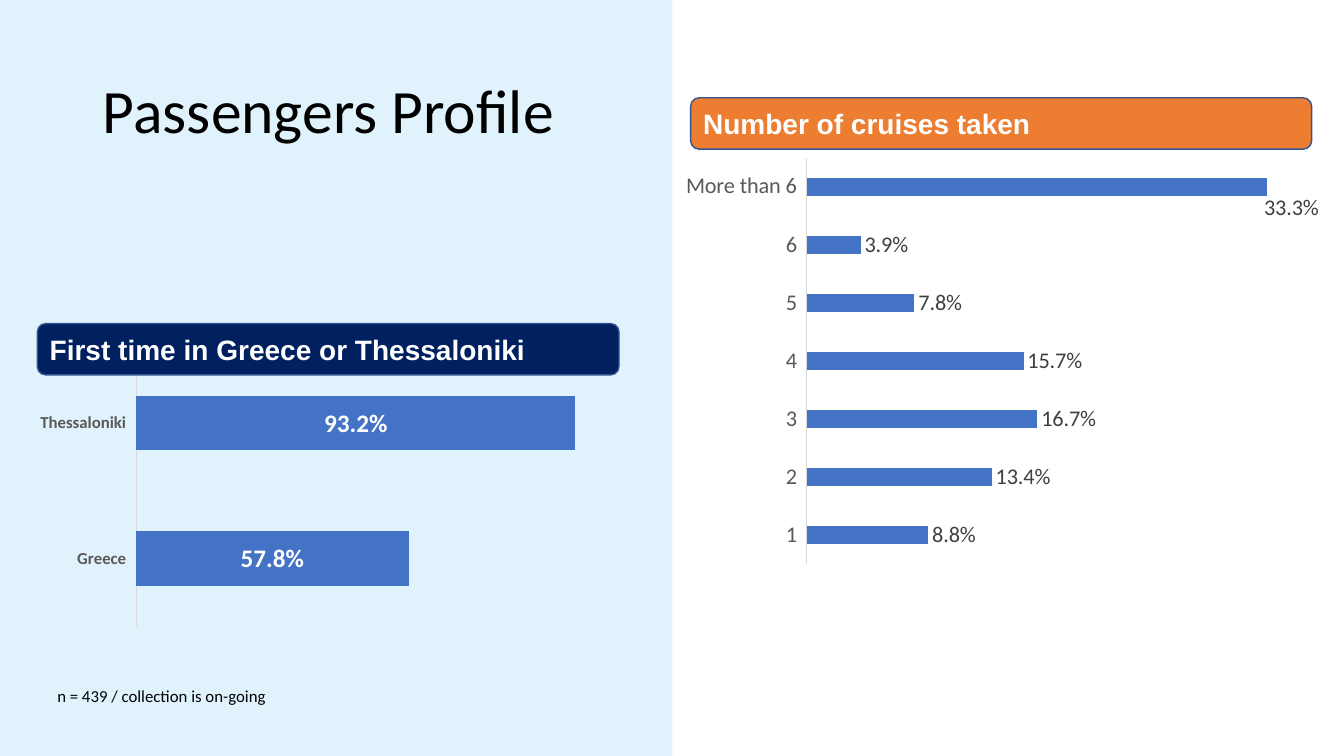
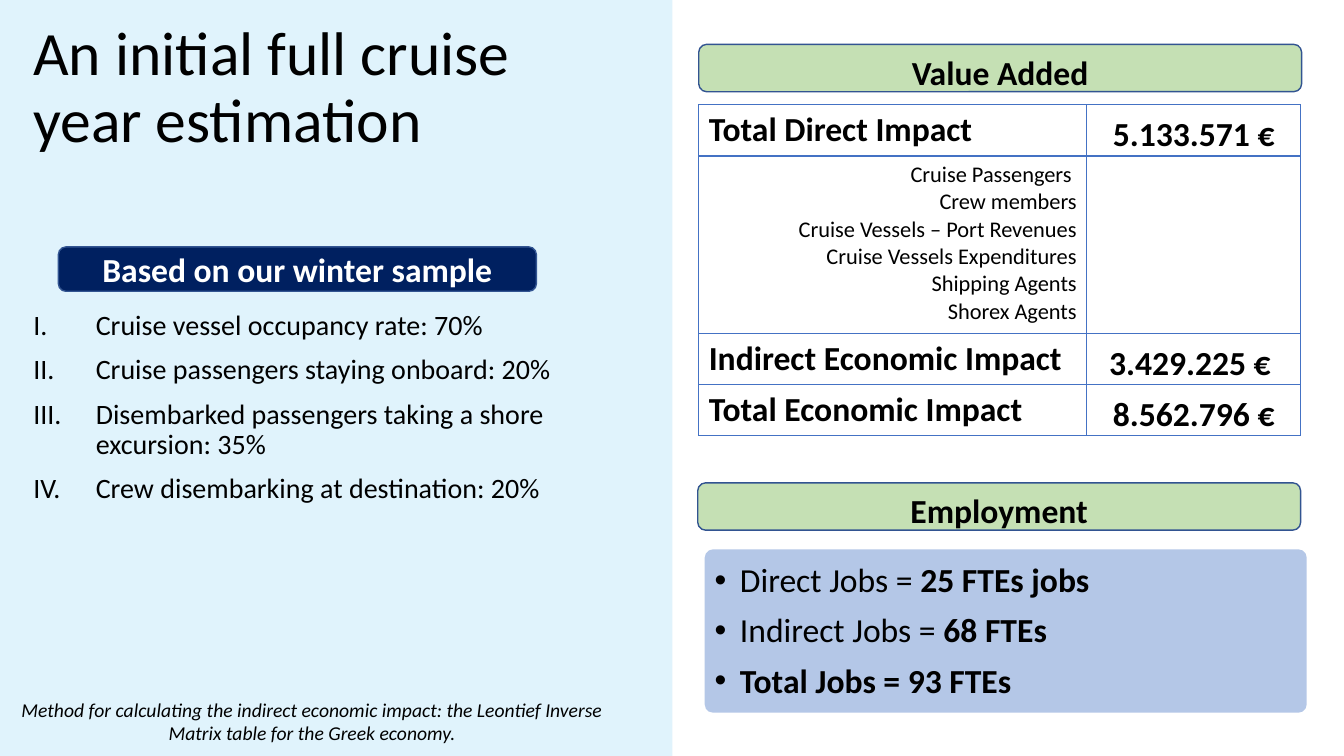
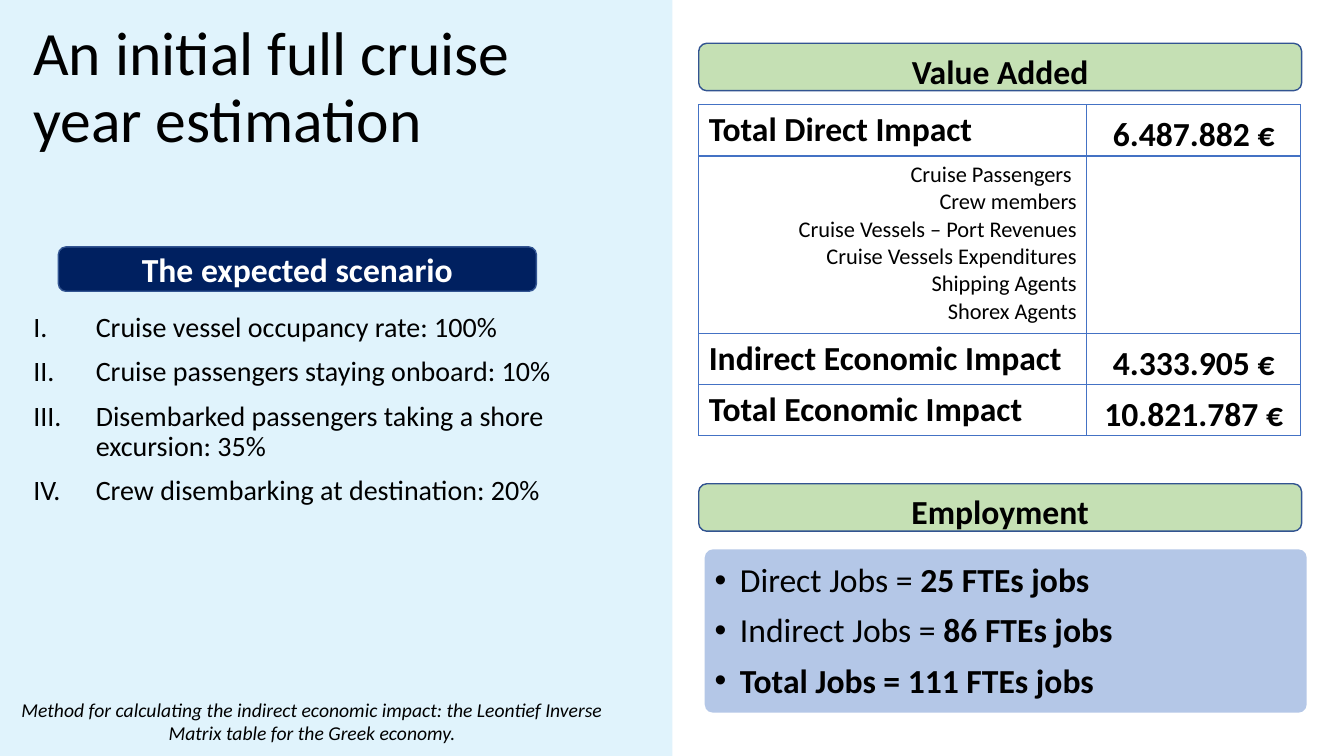
from dataclasses import dataclass

from lxml.etree import SubElement
from pptx import Presentation
from pptx.chart.data import CategoryChartData
from pptx.dml.color import RGBColor
from pptx.enum.chart import XL_CHART_TYPE, XL_LABEL_POSITION, XL_TICK_LABEL_POSITION, XL_TICK_MARK
from pptx.enum.shapes import MSO_SHAPE
from pptx.enum.text import MSO_ANCHOR, MSO_AUTO_SIZE, PP_ALIGN
from pptx.oxml import parse_xml
from pptx.oxml.ns import nsdecls, qn
from pptx.util import Pt

PX = 9144
SLIDE = (1333, 750)


@dataclass(frozen=True)
class Theme:
    font: str = "Calibri"
    heading_font: str = "Arial"
    black: str = "000000"
    white: str = "FFFFFF"
    band: str = "E0F3FC"
    navy: str = "002060"
    orange: str = "ED7D31"
    green: str = "C5E0B4"
    panel: str = "B4C7E7"
    blue: str = "4472C4"
    outline: str = "325491"
    axis_text: str = "595959"
    axis_line: str = "D9D9D9"
    label_text: str = "404040"
    title: int = 44
    large: int = 24
    body: int = 20
    value: int = 18
    detail: int = 16
    method: int = 14
    small: int = 12


T = Theme()

PROFILE = {
    "title": "Passengers Profile",
    "note": "n = 439 / collection is on-going",
    "charts": [
        {
            "heading": "Number of cruises taken", "fill": T.orange,
            "heading_box": (685, 97, 616, 51), "box": (674, 148, 634, 420),
            "kind": XL_CHART_TYPE.BAR_CLUSTERED, "gap": 219, "overlap": 0, "max": 0.35,
            "plot": (0.2, 0.02, 0.76, 0.96), "pos": XL_LABEL_POSITION.OUTSIDE_END,
            "axis_font": (T.detail, T.axis_text, False),
            "label_font": (T.detail, T.label_text, False), "lowered": 6,
            "data": {"1": 0.088, "2": 0.134, "3": 0.167, "4": 0.157,
                     "5": 0.078, "6": 0.039, "More than 6": 0.333},
        },
        {
            "heading": "First time in Greece or Thessaloniki", "fill": T.navy,
            "heading_box": (37, 321, 577, 51), "box": (37, 347, 577, 280),
            "kind": XL_CHART_TYPE.BAR_STACKED, "gap": 150, "overlap": 100, "max": 1,
            "plot": (0.17, 0.02, 0.81, 0.96), "pos": XL_LABEL_POSITION.CENTER,
            "axis_font": (T.small, T.axis_text, True),
            "label_font": (T.value, T.white, True), "lowered": None,
            "data": {"Greece": 0.578, "Thessaloniki": 0.932},
        },
    ],
}

ESTIMATE_TITLE = "An initial full cruise year estimation"
METHOD = ("Method for calculating the indirect economic impact: "
          "the Leontief Inverse Matrix table for the Greek economy.")
IMPACTS = ["Total Direct Impact", "Indirect Economic Impact", "Total Economic Impact"]
SOURCES = ["Cruise Passengers ", "Crew members", "Cruise Vessels – Port Revenues",
           "Cruise Vessels Expenditures", "Shipping Agents", "Shorex Agents"]
JOB_LEADS = ["Direct Jobs = ", "Indirect Jobs = ", ""]
SCENARIOS = [
    {
        "name": "Based on our winter sample", "occupancy": 70, "onboard": 20,
        "amounts": ["5.133.571 €", "3.429.225 € ", "8.562.796 €"],
        "jobs": ["25 FTEs jobs", "68 FTEs", "Total Jobs = 93 FTEs"],
        "list_box": (23, 304, 544, 252), "value_at": (693, 44), "jobs_at": (692, 479),
    },
    {
        "name": "The expected scenario", "occupancy": 100, "onboard": 10,
        "amounts": ["6.487.882 €", "4.333.905 €", "10.821.787 €"],
        "jobs": ["25 FTEs jobs", "86 FTEs jobs", "Total Jobs = 111 FTEs jobs"],
        "list_box": (23, 306, 544, 222), "value_at": (693, 43), "jobs_at": (693, 480),
    },
]
TABLE_AT = (693, 104)
COLS = (385, 212)
ROWS = (50, 176, 50, 50)


def rgb(color):
    return RGBColor.from_string(color)


def emu(box):
    return [v * PX for v in box]


def place(sp, box):
    sp.left, sp.top, sp.width, sp.height = emu(box)


def set_font(font, size, color=T.black, bold=False, italic=False, name=T.font):
    font.size, font.bold, font.italic, font.name = Pt(size), bold, italic, name
    font.color.rgb = rgb(color)


def style(p, size, align=PP_ALIGN.LEFT, spacing=None, before=None, **look):
    p.alignment = align
    if spacing:
        p.line_spacing = spacing
    if before is not None:
        p.space_before = Pt(before)
    for r in p.runs:
        set_font(r.font, size, **look)


def write(tf, text, size, **look):
    tf.text = text
    for p in tf.paragraphs:
        style(p, size, **look)


def bullet(p, indent, tag, **attrs):
    pPr = p._p.get_or_add_pPr()
    pPr.set("marL", str(indent * PX))
    pPr.set("indent", str(-indent * PX))
    SubElement(pPr, qn("a:buFont"), typeface="Arial" if tag == "a:buChar" else T.font)
    SubElement(pPr, qn(tag), **attrs)


def add_box(s, kind, box, fill, line=None):
    sp = s.shapes.add_shape(kind, *emu(box))
    sp.shadow.inherit = False
    sp.fill.solid()
    sp.fill.fore_color.rgb = rgb(fill)
    if line:
        sp.line.color.rgb = rgb(line)
        sp.line.width = Pt(1)
    else:
        sp.line.fill.background()
    return sp


def add_heading(s, box, text, fill, size=T.large, **look):
    sp = add_box(s, MSO_SHAPE.ROUNDED_RECTANGLE, box, fill, T.outline)
    sp.text_frame.vertical_anchor = MSO_ANCHOR.MIDDLE
    write(sp.text_frame, text, size, bold=True, **look)


def add_text(s, box, wrap=True):
    tf = s.shapes.add_textbox(*emu(box)).text_frame
    tf.word_wrap = wrap
    return tf


def set_title(s, box, text):
    place(s.shapes.title, box)
    tf = s.shapes.title.text_frame
    tf.auto_size = MSO_AUTO_SIZE.NONE
    tf.vertical_anchor = MSO_ANCHOR.MIDDLE
    write(tf, text, T.title, spacing=0.9)


def layout_xml(plot=None, **offsets):
    parts = "".join(f'<c:{k} val="{v}"/>' for k, v in offsets.items())
    if plot:
        parts = ('<c:layoutTarget val="inner"/><c:xMode val="edge"/><c:yMode val="edge"/>'
                 + "".join(f'<c:{k} val="{v}"/>' for k, v in zip("xywh", plot)))
    return parse_xml(f'<c:layout {nsdecls("c")}><c:manualLayout>{parts}</c:manualLayout></c:layout>')


def add_bars(s, c):
    data = CategoryChartData(number_format="0.0%")
    data.categories = list(c["data"])
    data.add_series("Series 1", list(c["data"].values()))
    chart = s.shapes.add_chart(c["kind"], *emu(c["box"]), data).chart
    chart.has_legend = chart.has_title = False
    set_font(chart.font, 10)

    area = chart.element.find(".//" + qn("c:plotArea"))
    for old in area.findall(qn("c:layout")):
        area.remove(old)
    area.insert(0, layout_xml(c["plot"]))

    values, cats = chart.value_axis, chart.category_axis
    values.minimum_scale, values.maximum_scale = 0, c["max"]
    values.has_major_gridlines = values.visible = False
    cats.major_tick_mark = XL_TICK_MARK.NONE
    cats.tick_label_position = XL_TICK_LABEL_POSITION.LOW
    cats.format.line.color.rgb = rgb(T.axis_line)
    cats.format.line.width = Pt(0.75)
    set_font(cats.tick_labels.font, *c["axis_font"])

    plot = chart.plots[0]
    plot.vary_by_categories = False
    plot.gap_width, plot.overlap = c["gap"], c["overlap"]
    series = plot.series[0]
    series.format.fill.solid()
    series.format.fill.fore_color.rgb = rgb(T.blue)
    labels = series.data_labels
    labels.show_value = True
    labels.number_format, labels.number_format_is_linked = "0.0%", False
    labels.position = c["pos"]
    set_font(labels.font, *c["label_font"])
    if c["lowered"] is not None:
        label = series.points[c["lowered"]].data_label
        set_font(label.font, *c["label_font"])
        label.position = c["pos"]
        idx = labels._element.find(qn("c:dLbl")).find(qn("c:idx"))
        idx.addnext(layout_xml(x=-0.01, y=0.05))


def set_borders(cell):
    tcPr = cell._tc.get_or_add_tcPr()
    for i, side in enumerate(("lnL", "lnR", "lnT", "lnB")):
        tcPr.insert(i, parse_xml(
            f'<a:{side} {nsdecls("a")} w="12700"><a:solidFill><a:srgbClr val="{T.blue}"/>'
            f'</a:solidFill></a:{side}>'))


def add_impacts(s, amounts):
    box = (*TABLE_AT, sum(COLS), sum(ROWS))
    table = s.shapes.add_table(len(ROWS), len(COLS), *emu(box)).table
    table.first_row = table.horz_banding = False
    for col, w in zip(table.columns, COLS):
        col.width = w * PX
    for row, h in zip(table.rows, ROWS):
        row.height = h * PX
    for cell in table.iter_cells():
        cell.fill.background()
        set_borders(cell)
    for i, impact, amount in zip((0, 2, 3), IMPACTS, amounts):
        write(table.cell(i, 0).text_frame, impact, T.large, bold=True)
        cell = table.cell(i, 1)
        cell.margin_left = cell.margin_right = cell.margin_top = PX
        cell.margin_bottom = 0
        cell.vertical_anchor = MSO_ANCHOR.BOTTOM
        write(cell.text_frame, amount, T.large, bold=True, align=PP_ALIGN.CENTER)
    write(table.cell(1, 0).text_frame, "\n".join(SOURCES), T.detail, align=PP_ALIGN.RIGHT)


def add_jobs(s, jobs):
    tf = add_text(s, (699, 554, 591, 151))
    for i, (lead, count) in enumerate(zip(JOB_LEADS, jobs)):
        p = tf.add_paragraph() if i else tf.paragraphs[0]
        p.text = lead
        style(p, T.large, spacing=0.9, before=10)
        r = p.add_run()
        r.text = count
        set_font(r.font, T.large, bold=True)
        bullet(p, 25, "a:buChar", char="•")


def profile_slide(prs):
    s = prs.slides.add_slide(prs.slide_layouts[5])
    set_title(s, (92, 40, 1150, 145), PROFILE["title"])
    for c in PROFILE["charts"]:
        add_bars(s, c)
    for c in PROFILE["charts"]:
        add_heading(s, c["heading_box"], c["heading"], c["fill"], T.body,
                    color=T.white, name=T.heading_font)
    write(add_text(s, (47, 675, 230, 30), wrap=False), PROFILE["note"], T.small)


def scenario_slide(prs, sc):
    s = prs.slides.add_slide(prs.slide_layouts[1])
    set_title(s, (23, 16, 524, 145), ESTIMATE_TITLE)
    body = s.placeholders[1]
    place(body, sc["list_box"])
    tf = body.text_frame
    tf.auto_size = MSO_AUTO_SIZE.NONE
    write(tf, "\n".join([
        f"Cruise vessel occupancy rate: {sc['occupancy']}%",
        f"Cruise passengers staying onboard: {sc['onboard']}%",
        "Disembarked passengers taking a shore excursion: 35%",
        "Crew disembarking at destination: 20%",
    ]), T.body, spacing=0.9, before=10)
    for p in tf.paragraphs:
        bullet(p, 62, "a:buAutoNum", type="romanUcPeriod")

    panel = add_box(s, MSO_SHAPE.ROUNDED_RECTANGLE, (699, 545, 597, 162), T.panel)
    panel.adjustments[0] = 0.05
    add_impacts(s, sc["amounts"])
    add_jobs(s, sc["jobs"])
    for at, text in ((sc["value_at"], "Value Added"), (sc["jobs_at"], "Employment")):
        add_heading(s, (*at, 598, 47), text, T.green, align=PP_ALIGN.CENTER, spacing=1.2)
    add_heading(s, (58, 245, 474, 44), sc["name"], T.navy, color=T.white, align=PP_ALIGN.CENTER)
    write(add_text(s, (0, 687, 619, 57)), METHOD, T.method, italic=True, align=PP_ALIGN.CENTER)


def add_master_band(prs):
    band = add_box(prs.slides[0], MSO_SHAPE.RECTANGLE, (0, 0, 667, 750), T.band)
    band.element.nvSpPr.cNvPr.set("id", "99")
    prs.slide_master.shapes.element.insert(2, band.element)


def main():
    prs = Presentation()
    prs.slide_width, prs.slide_height = emu(SLIDE)
    profile_slide(prs)
    add_master_band(prs)
    for sc in SCENARIOS:
        scenario_slide(prs, sc)
    prs.save("out.pptx")


if __name__ == "__main__":
    main()
